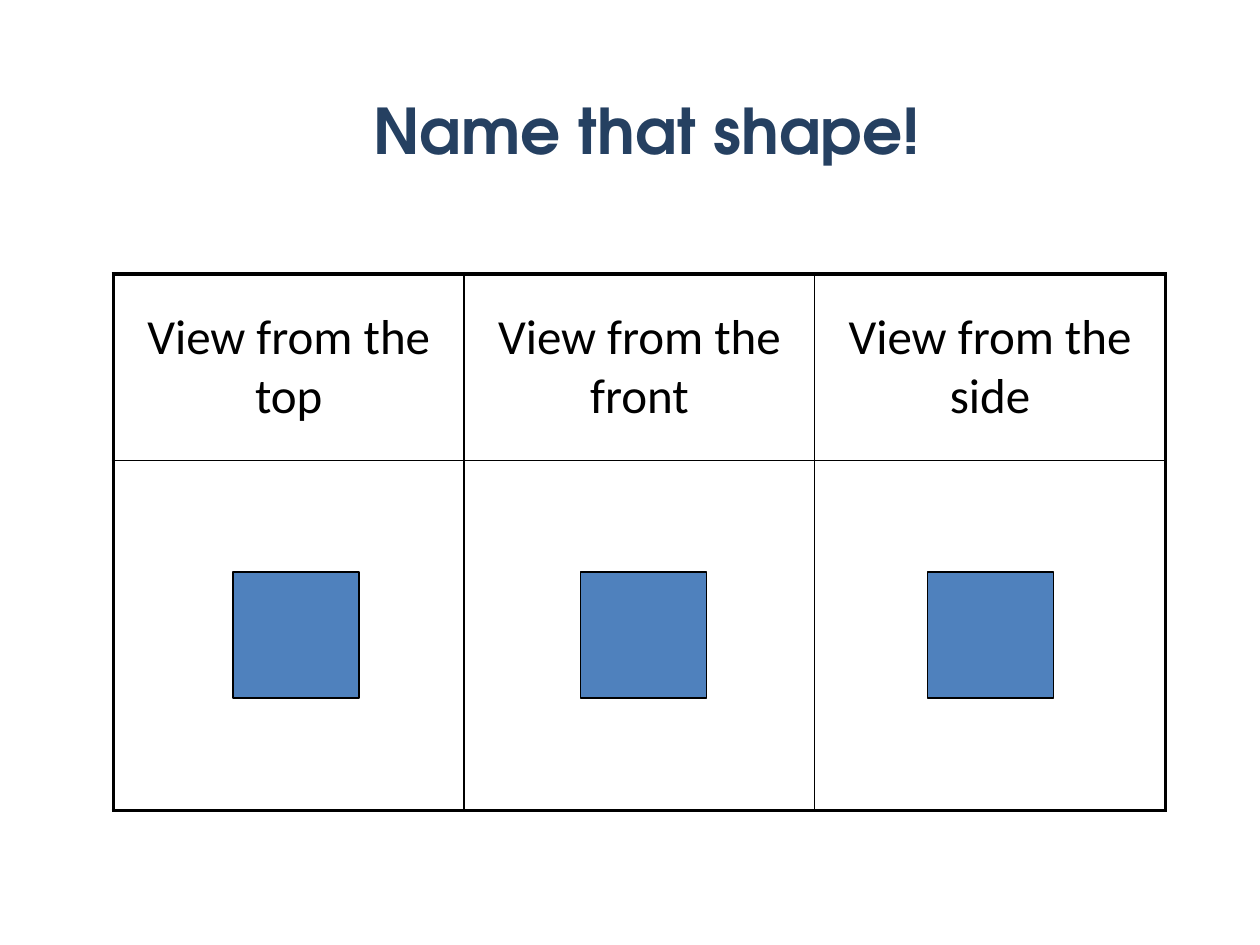
from lxml.etree import SubElement
from pptx import Presentation
from pptx.dml.color import RGBColor
from pptx.enum.shapes import MSO_SHAPE
from pptx.enum.text import MSO_ANCHOR, PP_ALIGN
from pptx.oxml.ns import qn
from pptx.util import Inches, Pt

WIDTH, HEIGHT = 10, 7.5
VIEWS = ["top", "front", "side"]
ROW_HEIGHTS = [1.48, 2.78]
THICK, THIN = 2.25, 1


def color(value):
    return RGBColor.from_string(value)


def inches(*lengths):
    return [Inches(length) for length in lengths]


def write(frame, text, font="Calibri", size=28, fill="000000", bold=False, before=0):
    para = frame.paragraphs[0]
    para.alignment = PP_ALIGN.CENTER
    para.space_before = Pt(before)
    span = para.add_run()
    span.text = text
    span.font.name = font
    span.font.size = Pt(size)
    span.font.bold = bold
    span.font.color.rgb = color(fill)


def set_borders(cell, widths):
    """Draw black borders; widths lists left, right, top and bottom in points."""
    properties = cell._tc.get_or_add_tcPr()
    for index, (side, width) in enumerate(zip("LRTB", widths)):
        line = SubElement(properties, qn(f"a:ln{side}"), w=str(Pt(width)))
        fill = SubElement(line, qn("a:solidFill"))
        SubElement(fill, qn("a:srgbClr"), val="000000")
        properties.insert(index, line)


def add_title(page, left, top, width, height):
    box = page.shapes.add_textbox(*inches(left, top, width, height))
    box.text_frame.word_wrap = False
    write(box.text_frame, "Name that shape!", font="TeX Gyre Adventor",
          size=36, fill="254061", bold=True)


def add_views_table(page, left, top, width):
    rows, columns = len(ROW_HEIGHTS), len(VIEWS)
    frame = page.shapes.add_table(
        rows, columns, *inches(left, top, width, sum(ROW_HEIGHTS)))
    table = frame.table
    table.first_row = table.horz_banding = False
    for column in table.columns:
        column.width = Inches(width / columns)
    for r, height in enumerate(ROW_HEIGHTS):
        table.rows[r].height = Inches(height)
        for c in range(columns):
            cell = table.cell(r, c)
            cell.fill.background()
            cell.vertical_anchor = MSO_ANCHOR.MIDDLE
            outer_sides = (c == 0, c == columns - 1, r == 0, r == rows - 1)
            set_borders(cell, [THICK if outer else THIN for outer in outer_sides])
    for c, view in enumerate(VIEWS):
        write(table.cell(0, c).text_frame, f"View from the {view}", before=5.6)


def add_view_squares(page, left, top, side, step):
    for c in range(len(VIEWS)):
        square = page.shapes.add_shape(
            MSO_SHAPE.RECTANGLE, *inches(left + c * step, top, side, side))
        square.shadow.inherit = False
        square.fill.solid()
        square.fill.fore_color.rgb = color("4F81BD")
        square.line.color.rgb = color("000000")
        square.line.width = Pt(0.75)


def main():
    deck = Presentation()
    deck.slide_width, deck.slide_height = inches(WIDTH, HEIGHT)
    page = deck.slides.add_slide(deck.slide_layouts[6])
    add_views_table(page, left=0.09 * WIDTH, top=0.29 * HEIGHT, width=8.35)
    add_view_squares(page, left=1.85, top=4.54, side=1, step=2.755)
    add_title(page, left=2.38, top=0.09 * HEIGHT, width=5.51, height=0.71)
    deck.save("out.pptx")


if __name__ == "__main__":
    main()
